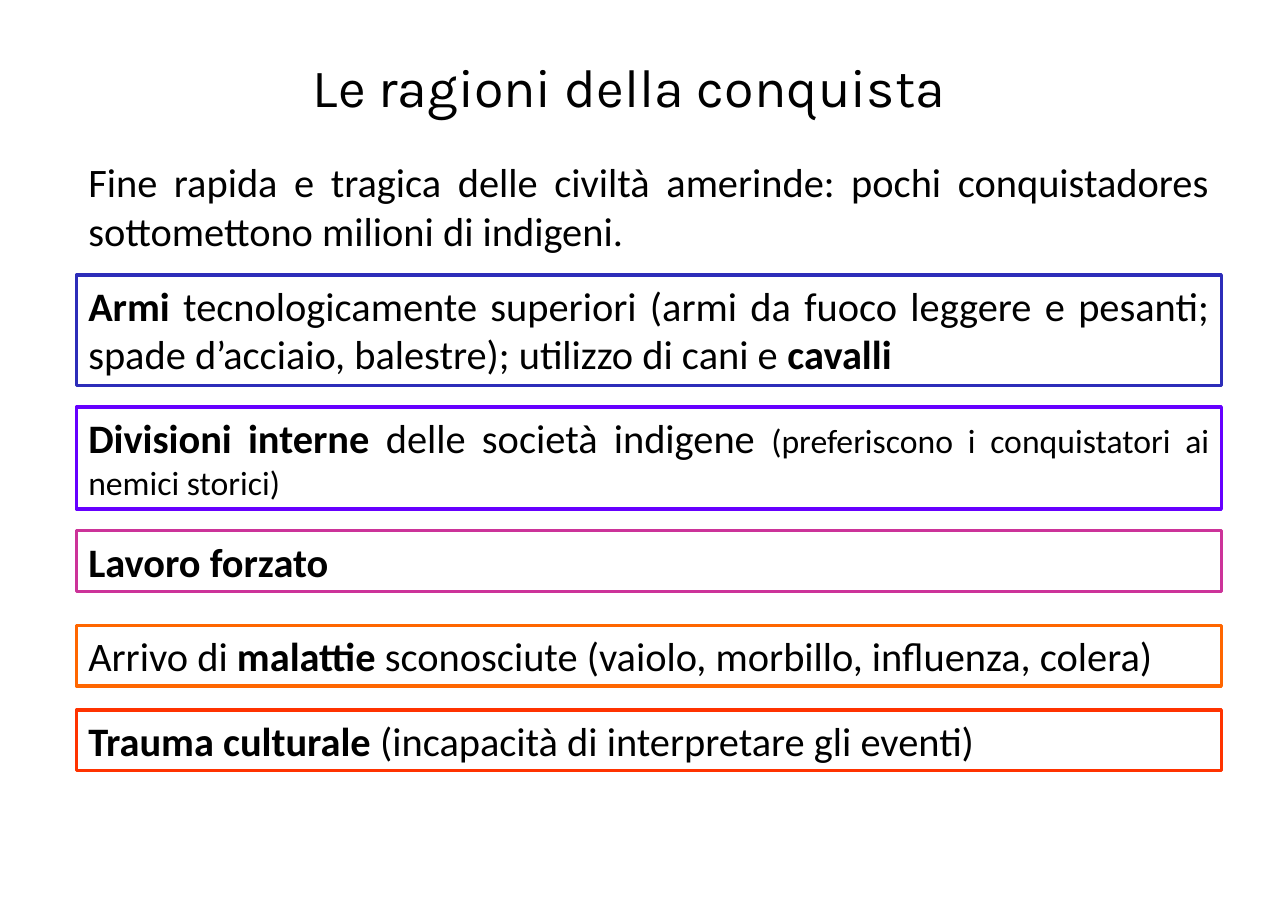
from pptx import Presentation
from pptx.dml.color import RGBColor
from pptx.enum.shapes import MSO_SHAPE
from pptx.enum.text import MSO_ANCHOR, MSO_AUTO_SIZE, PP_ALIGN
from pptx.util import Inches, Pt

COLORS = {
    "text": "000000",
    "paper": "FFFFFF",
    "weapons": "2D2DB9",
    "divisions": "6600FF",
    "labour": "CC3399",
    "diseases": "FF6600",
    "trauma": "FF3300",
}
LEFT, WIDTH = 0.63, 9.45

# Each statement: top, height, border colour name, runs of (text, bold, size)
STATEMENTS = [
    (1.25, 0.91, None, [
        ("Fine rapida e tragica delle civiltà amerinde: pochi conquistadores "
         "sottomettono milioni di indigeni.", False, 24)]),
    (2.27, 0.91, "weapons", [
        ("Armi", True, 24),
        (" tecnologicamente superiori (armi da fuoco leggere e pesanti; "
         "spade d’acciaio, balestre); utilizzo di cani e ", False, 24),
        ("cavalli", True, 24)]),
    (3.36, 0.84, "divisions", [
        ("Divisioni interne", True, 24),
        (" delle società indigene ", False, 24),
        ("(preferiscono i conquistatori ai nemici storici)", False, 20)]),
    (4.38, 0.5, "labour", [("Lavoro forzato", True, 24)]),
    (5.16, 0.5, "diseases", [
        ("Arrivo di ", False, 24),
        ("malattie", True, 24),
        (" sconosciute (vaiolo, morbillo, influenza, colera)", False, 24)]),
    (5.86, 0.5, "trauma", [
        ("Trauma culturale ", True, 24),
        ("(incapacità di interpretare gli eventi)", False, 24)]),
]


def color(name):
    return RGBColor.from_string(COLORS[name])


def format_paragraph(paragraph, font_name, alignment):
    paragraph.alignment = alignment
    paragraph.font.name = font_name
    paragraph.font.color.rgb = color("text")


def add_heading(slide, text):
    heading = slide.shapes.title
    heading.left, heading.top = Inches(1), Inches(0.39)
    heading.width, heading.height = Inches(8.39), Inches(0.64)
    heading.text_frame.text = text
    paragraph = heading.text_frame.paragraphs[0]
    format_paragraph(paragraph, "Karla", PP_ALIGN.CENTER)
    paragraph.font.size = Pt(32)


def add_statement(slide, top, height, border, runs):
    box = slide.shapes.add_shape(
        MSO_SHAPE.RECTANGLE,
        Inches(LEFT), Inches(top), Inches(WIDTH), Inches(height))
    box.shadow.inherit = False
    box.fill.solid()
    box.fill.fore_color.rgb = color("paper")
    if border:
        box.line.color.rgb = color(border)
        box.line.width = Pt(2)
    else:
        box.line.fill.background()

    frame = box.text_frame
    frame.word_wrap = True
    frame.auto_size = MSO_AUTO_SIZE.SHAPE_TO_FIT_TEXT
    frame.vertical_anchor = MSO_ANCHOR.TOP
    paragraph = frame.paragraphs[0]
    format_paragraph(paragraph, "Calibri", PP_ALIGN.JUSTIFY)
    for text, bold, size in runs:
        run = paragraph.add_run()
        run.text = text
        run.font.bold = bold
        run.font.size = Pt(size)


def main():
    deck = Presentation()
    deck.slide_width, deck.slide_height = Inches(10.63), Inches(7.5)
    title_only = deck.slide_layouts[5]
    slide = deck.slides.add_slide(title_only)

    # Heading
    add_heading(slide, "Le ragioni della conquista")

    # Introduction and the five reasons
    for statement in STATEMENTS:
        add_statement(slide, *statement)

    deck.save("out.pptx")


if __name__ == "__main__":
    main()
